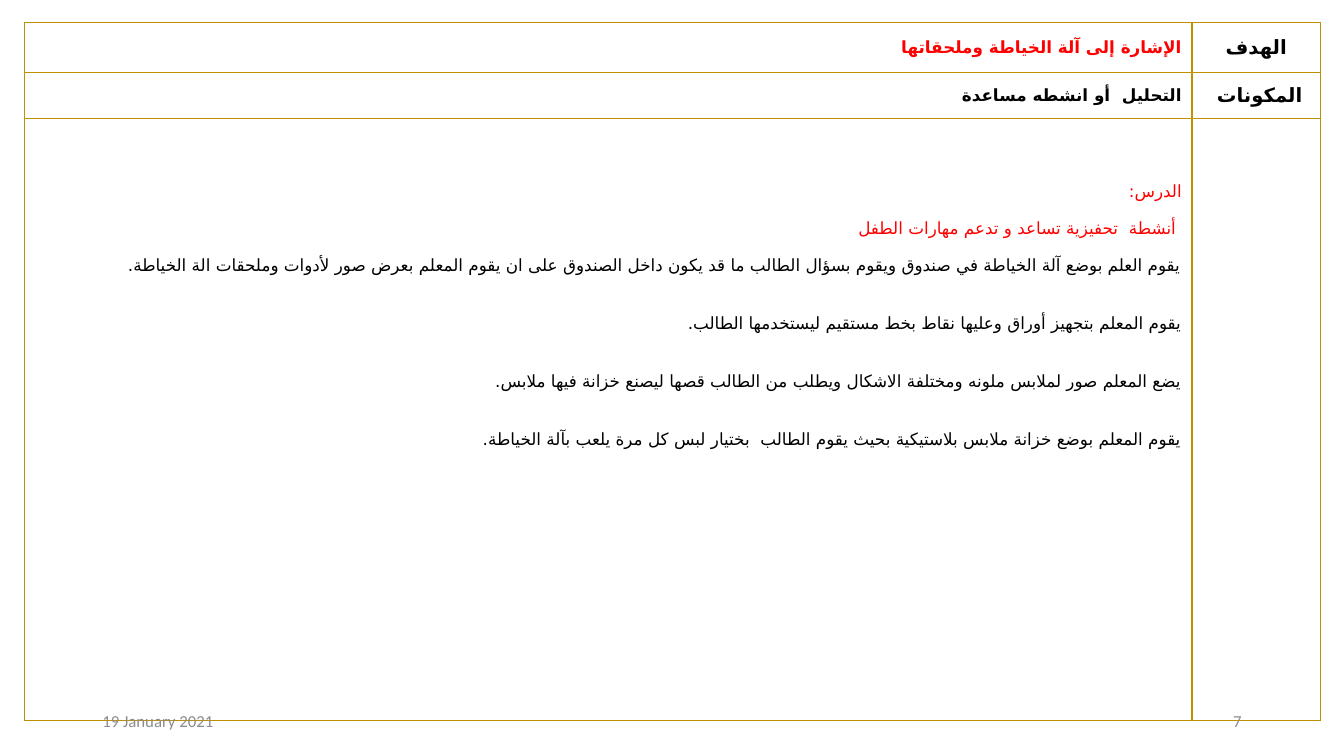
from lxml.etree import SubElement
from pptx import Presentation
from pptx.dml.color import RGBColor
from pptx.enum.text import MSO_ANCHOR, PP_ALIGN
from pptx.oxml.ns import qn
from pptx.util import Pt

FONT, ARABIC_FONT = "Calibri", "DejaVu Sans"
BLACK, RED, GOLD, GREY = "000000", "FF0000", "BF9000", "8C8C8C"

GOAL = "الإشارة إلى آلة الخياطة وملحقاتها"
COMPONENTS = "التحليل  أو انشطه مساعدة"

# Lesson lines: text, colour, right-to-left, space before
LESSON = [
    ("الدرس:", RED, True, 0),
    ("أنشطة  تحفيزية تساعد و تدعم مهارات الطفل ", RED, False, 12.4),
    ("يقوم العلم بوضع آلة الخياطة في صندوق ويقوم بسؤال الطالب ما قد يكون داخل الصندوق على ان يقوم المعلم بعرض صور لأدوات وملحقات الة الخياطة.", BLACK, True, 12.4),
    ("يقوم المعلم بتجهيز أوراق وعليها نقاط بخط مستقيم ليستخدمها الطالب.", BLACK, True, 27.4),
    ("يضع المعلم صور لملابس ملونه ومختلفة الاشكال ويطلب من الطالب قصها ليصنع خزانة فيها ملابس.", BLACK, True, 27.4),
    ("يقوم المعلم بوضع خزانة ملابس بلاستيكية بحيث يقوم الطالب  بختيار لبس كل مرة يلعب بآلة الخياطة.", BLACK, True, 27.4),
]


def color(value):
    return RGBColor.from_string(value)


def write(paragraph, text, size=12, ink=BLACK, bold=False,
          align=PP_ALIGN.RIGHT, rtl=False):
    paragraph.alignment = align
    if rtl:
        paragraph._p.get_or_add_pPr().set("rtl", "1")
    run = paragraph.add_run()
    run.text = text
    run.font.name = FONT
    run.font.size = Pt(size)
    run.font.bold = bold
    run.font.color.rgb = color(ink)
    SubElement(run._r.get_or_add_rPr(), qn("a:cs"), typeface=ARABIC_FONT)


def style_cell(cell):
    """Give a cell gold borders and no fill."""
    properties = cell._tc.get_or_add_tcPr()
    for side in ("a:lnL", "a:lnR", "a:lnT", "a:lnB"):
        line = SubElement(properties, qn(side), w=str(Pt(1)))
        fill = SubElement(line, qn("a:solidFill"))
        SubElement(fill, qn("a:srgbClr"), val=GOLD)
    cell.fill.background()


def add_lesson_table(slide):
    widths, heights = (833.8, 91.8), (36, 32.4, 430.2)
    frame = slide.shapes.add_table(3, 2, Pt(17.6), Pt(16), Pt(sum(widths)),
                                   Pt(sum(heights)))
    table = frame.table
    table.first_row = table.horz_banding = False
    for column, width in zip(table.columns, widths):
        column.width = Pt(width)
    for row, height in zip(table.rows, heights):
        row.height = Pt(height)
    for cell in table.iter_cells():
        style_cell(cell)

    # Heading rows
    headings = [(GOAL, RED, "الهدف"), (COMPONENTS, BLACK, "المكونات ")]
    for row, (text, ink, label) in enumerate(headings):
        content, title = table.cell(row, 0), table.cell(row, 1)
        content.vertical_anchor = title.vertical_anchor = MSO_ANCHOR.MIDDLE
        write(content.text_frame.paragraphs[0], text, 12, ink, True, rtl=True)
        write(title.text_frame.paragraphs[0], label, 14, BLACK, True,
              PP_ALIGN.CENTER, rtl=True)

    # Lesson body
    body = table.cell(2, 0)
    body.margin_top = Pt(45.6)
    for index, (text, ink, rtl, gap) in enumerate(LESSON):
        frame = body.text_frame
        paragraph = frame.add_paragraph() if index else frame.paragraphs[0]
        paragraph.line_spacing = Pt(14)
        paragraph.space_before = Pt(gap)
        write(paragraph, text, ink=ink, rtl=rtl)


def add_footer(slide, left, text, align):
    box = slide.shapes.add_textbox(Pt(left), Pt(500.4), Pt(216), Pt(28.8))
    box.text_frame.word_wrap = True
    box.text_frame.vertical_anchor = MSO_ANCHOR.MIDDLE
    write(box.text_frame.paragraphs[0], text, ink=GREY, align=align)


def main():
    presentation = Presentation()
    presentation.slide_width, presentation.slide_height = Pt(960), Pt(540)
    slide = presentation.slides.add_slide(presentation.slide_layouts[6])
    add_lesson_table(slide)
    add_footer(slide, 66, "19 January 2021", PP_ALIGN.LEFT)
    add_footer(slide, 678, "7", PP_ALIGN.RIGHT)
    presentation.save("out.pptx")


if __name__ == "__main__":
    main()
